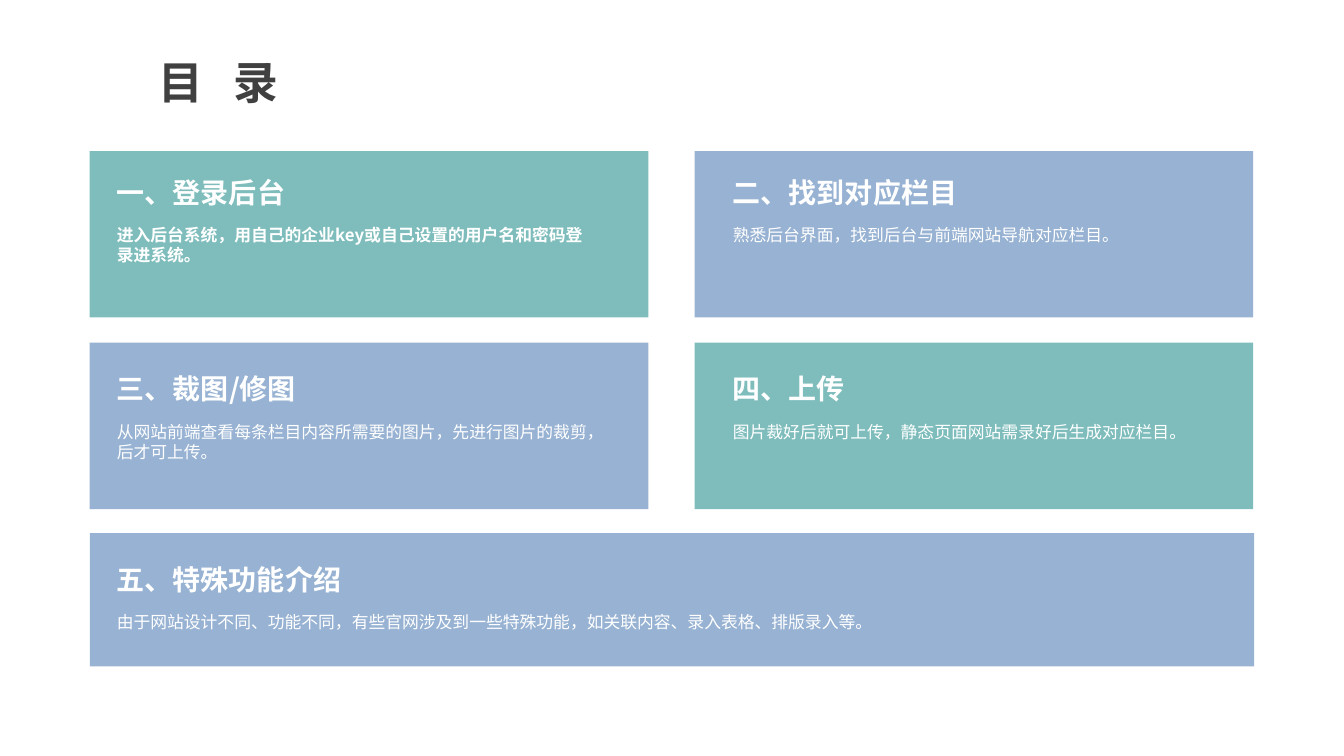
import pptx
import pptx.dml.color
import pptx.enum.shapes
import pptx.enum.text
import pptx.oxml.ns
import pptx.util
from lxml import etree

Inches = pptx.util.Inches
Pt = pptx.util.Pt
qn = pptx.oxml.ns.qn
FONT = "Noto Sans CJK SC"
COLORS = {"teal": "48A2A0", "blue": "6C92C0", "white": "FFFFFF", "title": "404040"}
LEFT, TOP = 0.89, 1.5
CARD_W, CARD_H = 5.54, 1.65
COL_STEP, ROW_STEP = 6, 1.9
WIDE_W, WIDE_H = 11.55, 1.32

CARDS = [
    ("一、登录后台", "进入后台系统，用自己的企业key或自己设置的用户名和密码登录进系统。", "teal", True),
    ("二、找到对应栏目", "熟悉后台界面，找到后台与前端网站导航对应栏目。", "blue", False),
    ("三、裁图/修图", "从网站前端查看每条栏目内容所需要的图片，先进行图片的裁剪，后才可上传。", "blue", False),
    ("四、上传", "图片裁好后就可上传，静态页面网站需录好后生成对应栏目。", "teal", False),
]
WIDE_CARD = (
    "五、特殊功能介绍",
    "由于网站设计不同、功能不同，有些官网涉及到一些特殊功能，如关联内容、录入表格、排版录入等。",
    "blue",
    False,
)


def rgb(name):
    return pptx.dml.color.RGBColor.from_string(COLORS[name])


def add_text(slide, text, x, y, w, h, size, bold, color="white", wrap=False, spacing=0):
    tf = slide.shapes.add_textbox(Inches(x), Inches(y), Inches(w), Inches(h)).text_frame
    tf.word_wrap = wrap
    tf.auto_size = pptx.enum.text.MSO_AUTO_SIZE.SHAPE_TO_FIT_TEXT
    p = tf.paragraphs[0]
    p.text = text
    p.font.size = Pt(size)
    p.font.bold = bold
    p.font.name = FONT
    p.font.color.rgb = rgb(color)
    props = p._p.pPr.find(qn("a:defRPr"))
    etree.SubElement(props, qn("a:ea")).set("typeface", FONT)
    if spacing:
        props.set("spc", str(spacing))


def add_panel(slide, x, y, w, h, color):
    sp = slide.shapes.add_shape(
        pptx.enum.shapes.MSO_SHAPE.RECTANGLE, Inches(x), Inches(y), Inches(w), Inches(h)
    )
    sp.shadow.inherit = False
    sp.fill.solid()
    sp.fill.fore_color.rgb = rgb(color)
    sp.line.fill.background()
    fill = sp._element.spPr.find(qn("a:solidFill"))
    etree.SubElement(fill[0], qn("a:alpha")).set("val", "70000")


def add_card(slide, card, x, y, w, h, pad_x, pad_y, body_w):
    heading, body, color, bold_body = card
    add_panel(slide, x, y, w, h, color)
    heading_w = 0.2 + 0.28 * len(heading)
    add_text(slide, heading, x + pad_x, y + pad_y, heading_w, 0.43, 20, True)
    add_text(slide, body, x + pad_x, y + pad_y + 0.49, body_w, 0.3, 12, bold_body, wrap=True)


def add_title(slide, x, y, w, h):
    add_text(slide, "目 录", x, y, w, h, 32, True, "title", spacing=720)


def add_contents(slide, x, y):
    for i, card in enumerate(CARDS):
        row, col = divmod(i, 2)
        add_card(
            slide, card, x + col * COL_STEP, y + row * ROW_STEP, CARD_W, CARD_H,
            (0.17, 0.28)[col], (0.19, 0.24)[row], 4.89,
        )
    add_card(slide, WIDE_CARD, x, y + 2 * ROW_STEP - 0.01, WIDE_W, WIDE_H, 0.17, 0.24, 9.05)


def main():
    prs = pptx.Presentation()
    prs.slide_width = Inches(13.33)
    prs.slide_height = Inches(7.5)
    slide = prs.slides.add_slide(prs.slide_layouts[6])
    add_title(slide, 1.47, 0.49, 1.46, 0.63)
    add_contents(slide, LEFT, TOP)
    prs.save("out.pptx")


if __name__ == "__main__":
    main()
